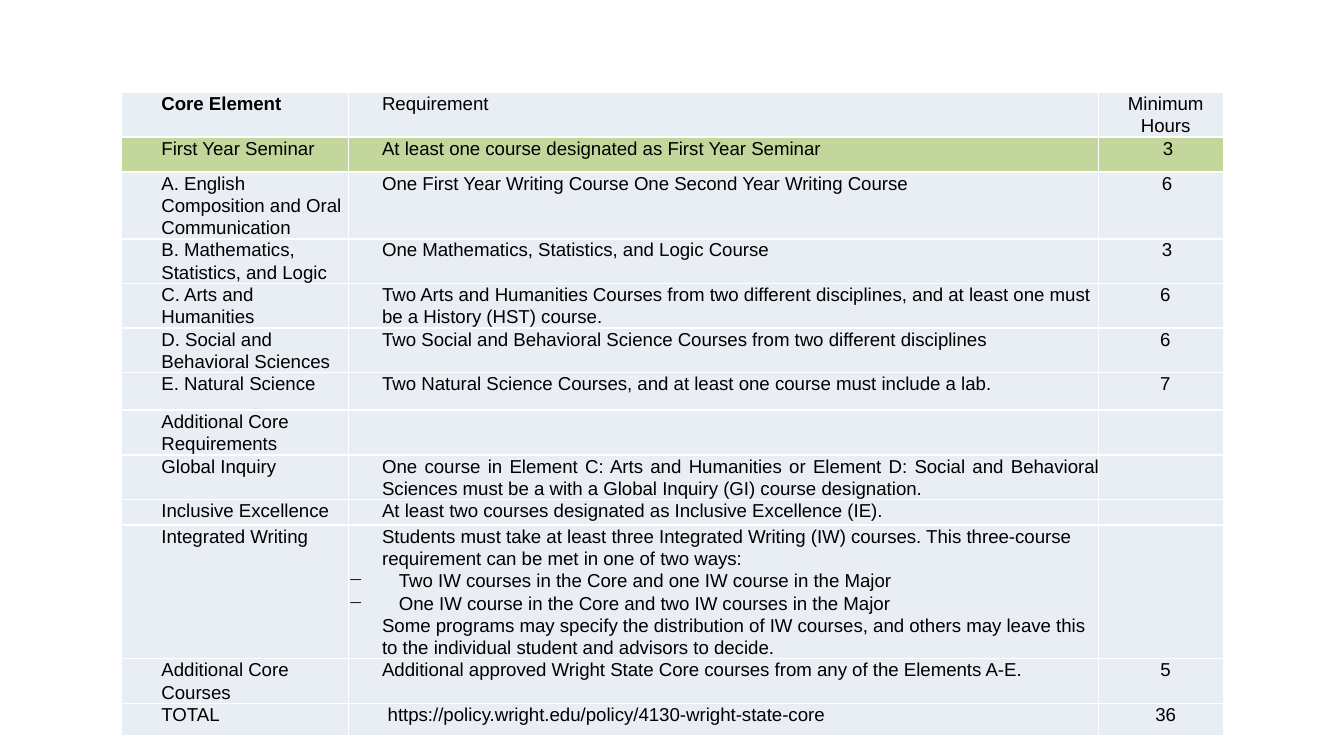
from lxml import etree
from pptx import Presentation
from pptx.dml.color import RGBColor
from pptx.enum.text import PP_ALIGN
from pptx.oxml.ns import qn
from pptx.util import Pt

LEFT, MID, JUST = PP_ALIGN.LEFT, PP_ALIGN.CENTER, PP_ALIGN.JUSTIFY
HUES = {"text": "000000", "row": "E9EDF4", "mark": "C3D69B", "line": "FFFFFF"}
COLS = [121.7, 401.8, 67]
DASH = "−"

# height, core element, requirement lines, hours, indent of hours
ROWS = [
    (12.2, "Core Element", ["Requirement"], "Minimum Hours", 5),
    (18.7, "First Year Seminar",
     ["At least one course designated as First Year Seminar"], "3", 7.5),
    (18.7, "A. English Composition and Oral Communication",
     ["One First Year Writing Course One Second Year Writing Course"], "6", 6.5),
    (13, "B. Mathematics, Statistics, and Logic",
     ["One Mathematics, Statistics, and Logic Course"], "3", 6.5),
    (19.4, "C. Arts and Humanities",
     ["Two Arts and Humanities Courses from two different disciplines, "
      "and at least one must be a History (HST) course."], "6", 4.5),
    (20.2, "D. Social and Behavioral Sciences",
     ["Two Social and Behavioral Science Courses from two different disciplines"],
     "6", 4.5),
    (20.2, "E. Natural Science",
     ["Two Natural Science Courses, and at least one course must include a lab."],
     "7", 4.5),
    (12.2, "Additional Core Requirements", [""], "", 0),
    (23, "Global Inquiry",
     ["One course in Element C: Arts and Humanities or Element D: Social and "
      "Behavioral Sciences must be a with a Global Inquiry (GI) course designation."],
     "", 0),
    (13.7, "Inclusive Excellence",
     ["At least two courses designated as Inclusive Excellence (IE)."], "", 0),
    (31, "Integrated Writing",
     ["Students must take at least three Integrated Writing (IW) courses. "
      "This three-course requirement can be met in one of two ways:",
      DASH + "Two IW courses in the Core and one IW course in the Major",
      DASH + "One IW course in the Core and two IW courses in the Major",
      "Some programs may specify the distribution of IW courses, and others may "
      "leave this to the individual student and advisors to decide."], "", 0),
    (19.4, "Additional Core Courses",
     ["Additional approved Wright State Core courses from any of the Elements A-E."],
     "5", 5),
    (17.3, "TOTAL", ["https://policy.wright.edu/policy/4130-wright-state-core"],
     "36", 5),
]


def style(cell, hue):
    """Clear the margins, then draw white borders and the fill."""
    cell.margin_left = cell.margin_right = cell.margin_top = cell.margin_bottom = 0
    props = cell._tc.get_or_add_tcPr()
    for side in ("lnL", "lnR", "lnT", "lnB"):
        line = etree.SubElement(props, qn("a:" + side), w=str(Pt(1)))
        fill = etree.SubElement(line, qn("a:solidFill"))
        etree.SubElement(fill, qn("a:srgbClr"), val=HUES["line"])
    cell.fill.solid()
    cell.fill.fore_color.rgb = RGBColor.from_string(HUES[hue])


def write(cell, lines, indent, align, bold=False):
    """Fill a cell; lines that start with a dash become bullets."""
    cell.text_frame.text = "\n".join(line.lstrip(DASH) for line in lines)
    for line, para in zip(lines, cell.text_frame.paragraphs):
        para.alignment = align
        para.line_spacing = 1.07
        props = para._p.get_or_add_pPr()
        props.set("marL", str(Pt(indent)))
        props.set("indent", "0")
        if line.startswith(DASH):
            props.set("marL", str(Pt(27)))
            props.set("indent", str(-Pt(27)))
            etree.SubElement(props, qn("a:buChar"), char=DASH)
            tabs = etree.SubElement(props, qn("a:tabLst"))
            etree.SubElement(tabs, qn("a:tab"), pos=str(Pt(23)), algn="l")
        font = para.font
        if para.runs:
            font = para.runs[0].font
        font.name, font.size, font.bold = "Arial", Pt(10), bold
        font.color.rgb = RGBColor.from_string(HUES["text"])
        if not para.runs:
            etree.SubElement(para._p, qn("a:endParaRPr"), sz="1000")


deck = Presentation()
deck.slide_width, deck.slide_height = Pt(720), Pt(405)
slide = deck.slides.add_slide(deck.slide_layouts[6])

frame = slide.shapes.add_table(len(ROWS), len(COLS), Pt(65), Pt(49.5),
                               Pt(590.5), Pt(355.5))
table = frame.table
table.first_row = table.horz_banding = False
for col, width in zip(table.columns, COLS):
    col.width = Pt(width)

for i, (height, name, needs, hours, shift) in enumerate(ROWS):
    table.rows[i].height = Pt(height)
    for j in range(len(COLS)):
        style(table.cell(i, j), "mark" if i == 1 else "row")
    write(table.cell(i, 0), [name], 21.5, LEFT, bold=i == 0)
    write(table.cell(i, 1), needs, 21 if name == "TOTAL" else 18,
          JUST if name == "Global Inquiry" else LEFT)
    write(table.cell(i, 2), [hours], shift, MID)
frame.height = Pt(355.5)

deck.save("out.pptx")
